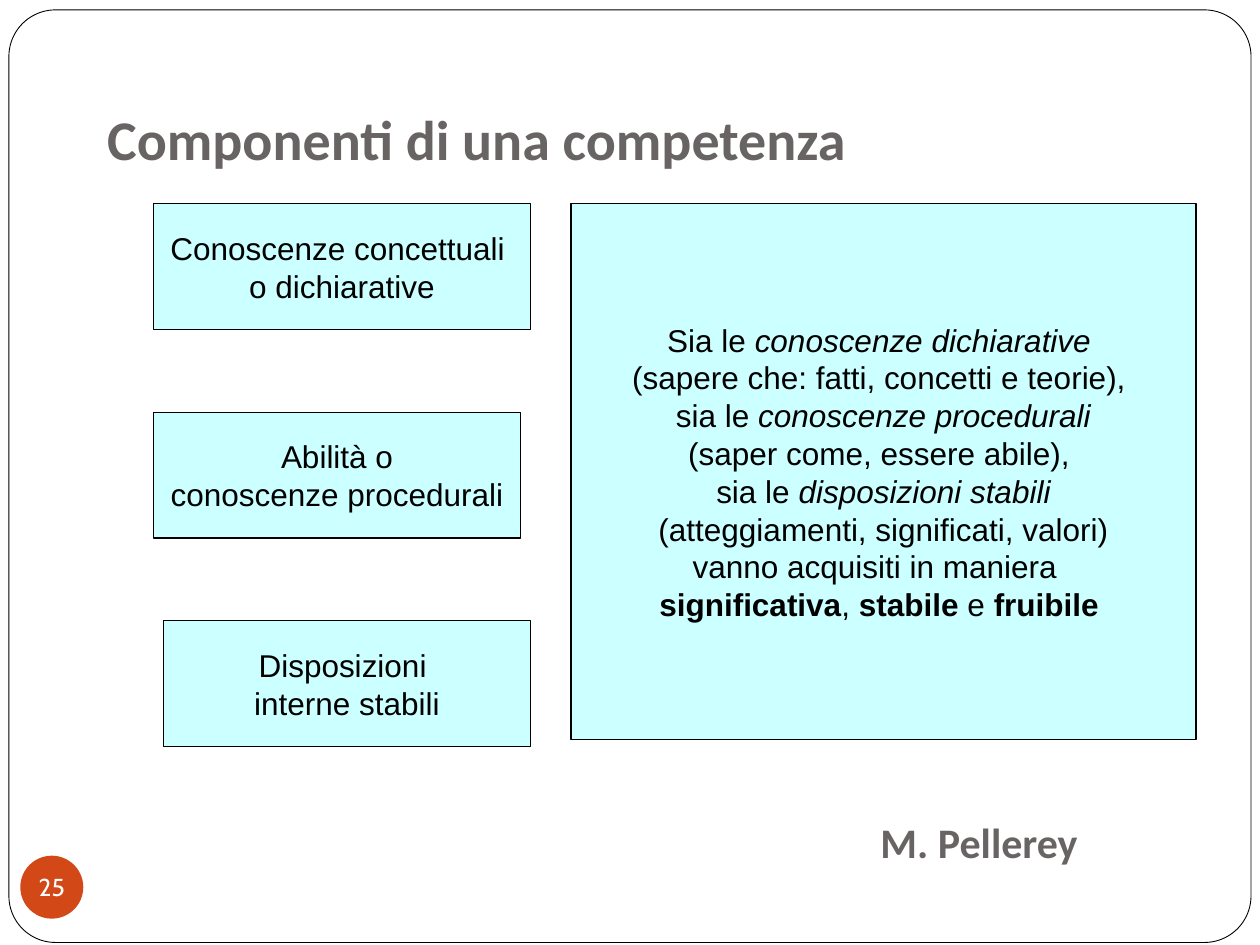
import pptx
import pptx.util
import pptx.dml.color
import pptx.enum.shapes
import pptx.enum.text

Cm = pptx.util.Cm
Pt = pptx.util.Pt
SHAPE = pptx.enum.shapes.MSO_SHAPE
ALIGN = pptx.enum.text.PP_ALIGN
ANCHOR = pptx.enum.text.MSO_ANCHOR

# Content: each paragraph is a list of (text, style) runs
TITLE = "Componenti di una competenza"
AUTHOR = "M. Pellerey"
PAGE_NUMBER = "25"
# (left, width, lines), from top to bottom
COMPONENTS = [
    (3.1, 7.59, ["Conoscenze concettuali ", "o dichiarative"]),
    (3.1, 7.39, ["Abilità o", "conoscenze procedurali"]),
    (3.3, 7.39, ["Disposizioni ", "interne stabili"]),
]
SUMMARY = [
    [("Sia le ", ""), ("conoscenze dichiarative ", "italic")],
    [("(sapere che: fatti, concetti e teorie), ", "")],
    [("sia le ", ""), ("conoscenze procedurali", "italic")],
    [("(saper come, essere abile), ", "")],
    [("sia le ", ""), ("disposizioni stabili", "italic")],
    [("(atteggiamenti, significati, valori)", "")],
    [("vanno acquisiti in maniera  ", "")],
    [("significativa", "bold"), (", ", ""), ("stabile", "bold"),
     (" e ", ""), ("fruibile ", "bold")],
]

# Formats, lengths in centimetres
COLORS = {"white": "FFFFFF", "black": "000000", "box": "CCFFFF",
          "badge": "D34817", "heading": "696464"}
BOX_TOP, BOX_STEP, BOX_HEIGHT = 4.11, 4.2, 2.54
BODY_FONT = {"name": "Arial", "size": Pt(18)}
BADGE_FONT = {"name": "Cabin", "size": Pt(14)}
TITLE_FONT = {"name": "Calibri", "size": Pt(32), "bold": True}
AUTHOR_FONT = {**TITLE_FONT, "size": Pt(24)}
BOX_FRAME = {"vertical_anchor": ANCHOR.MIDDLE, "word_wrap": False}
BADGE_FRAME = {**BOX_FRAME, "margin_left": 0, "margin_right": 0,
               "margin_top": 0, "margin_bottom": 0}
HEADING_FRAME = {"vertical_anchor": ANCHOR.BOTTOM, "word_wrap": True,
                 "auto_size": pptx.enum.text.MSO_AUTO_SIZE.NONE,
                 "margin_left": Cm(0.25), "margin_right": Cm(0.25),
                 "margin_top": Cm(0.13), "margin_bottom": Cm(0.25)}


def rgb(name):
    return pptx.dml.color.RGBColor.from_string(COLORS[name])


def apply(target, values):
    for name, value in values.items():
        setattr(target, name, value)


def plain(*lines):
    return [[(line, "")] for line in lines]


def write(shape, paragraphs, frame_format, font, color, align):
    frame = shape.text_frame
    apply(frame, frame_format)
    for index, runs in enumerate(paragraphs):
        paragraph = frame.add_paragraph() if index else frame.paragraphs[0]
        paragraph.alignment = align
        for text, style in runs:
            run = paragraph.add_run()
            run.text = text
            apply(run.font, font)
            run.font.color.rgb = rgb(color)
            if style:
                setattr(run.font, style, True)


def add_shape(slide, kind, place, fill, line_width=None):
    shape = slide.shapes.add_shape(kind, *map(Cm, place))
    shape.shadow.inherit = False
    shape.fill.solid()
    shape.fill.fore_color.rgb = rgb(fill)
    if line_width:
        shape.line.color.rgb = rgb("black")
        shape.line.width = Pt(line_width)
    else:
        shape.line.fill.background()
    return shape


def add_box(slide, place, paragraphs):
    box = add_shape(slide, SHAPE.RECTANGLE, place, "box", 0.75)
    write(box, paragraphs, BOX_FRAME, BODY_FONT, "black", ALIGN.CENTER)


def main():
    presentation = pptx.Presentation()
    presentation.slide_width = Cm(25.4)
    presentation.slide_height = Cm(19.05)
    slide = presentation.slides.add_slide(presentation.slide_layouts[5])
    title = slide.shapes.title

    # Rounded frame and page number, behind the title
    frame = add_shape(slide, SHAPE.ROUNDED_RECTANGLE,
                      (0.18, 0.2, 25.04, 18.8), "white", 0.5)
    frame.adjustments[0] = 0.05
    badge = add_shape(slide, SHAPE.OVAL, (0.41, 17.25, 1.27, 1.27), "badge")
    write(badge, plain(PAGE_NUMBER), BADGE_FRAME, BADGE_FONT, "white",
          ALIGN.CENTER)
    for shape in (frame, badge):
        title.element.addprevious(shape.element)

    # Title
    apply(title, {"left": Cm(1.91), "top": Cm(1.93),
                  "width": Cm(21.59), "height": Cm(1.78)})
    write(title, plain(TITLE), HEADING_FRAME, TITLE_FONT, "heading",
          ALIGN.LEFT)

    # Three components and their summary
    for index, (left, width, lines) in enumerate(COMPONENTS):
        top = BOX_TOP + index * BOX_STEP
        add_box(slide, (left, top, width, BOX_HEIGHT), plain(*lines))
    add_box(slide, (11.51, BOX_TOP, 12.6, 10.8), SUMMARY)

    # Author
    author = slide.shapes.add_textbox(*map(Cm, (17.5, 15.95, 6.43, 1.78)))
    write(author, plain(AUTHOR), HEADING_FRAME, AUTHOR_FONT, "heading",
          ALIGN.LEFT)

    presentation.save("out.pptx")


if __name__ == "__main__":
    main()
